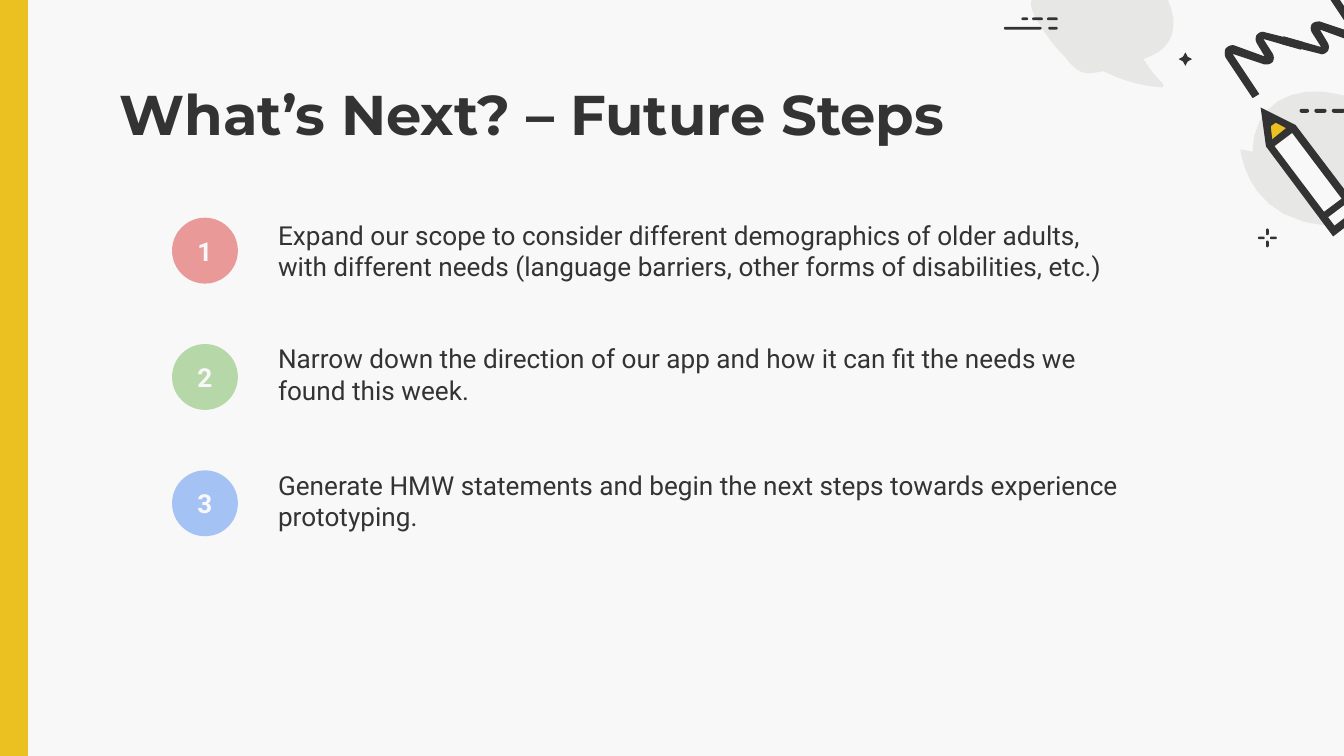
from pptx import Presentation
from pptx.dml.color import RGBColor
from pptx.enum.shapes import MSO_SHAPE
from pptx.enum.text import MSO_ANCHOR, PP_ALIGN
from pptx.util import Inches, Pt

RECTANGLE = MSO_SHAPE.RECTANGLE
ROUNDED = MSO_SHAPE.ROUNDED_RECTANGLE
STAR = MSO_SHAPE.STAR_4_POINT
OVAL = MSO_SHAPE.OVAL
TOP, MIDDLE = MSO_ANCHOR.TOP, MSO_ANCHOR.MIDDLE
LEFT, CENTER = PP_ALIGN.LEFT, PP_ALIGN.CENTER

COLORS = {
    "paper": "F8F8F8", "ink": "333333", "yellow": "EBC122", "grey": "E7E7E5",
    "red": "EA9999", "green": "B6D7A8", "blue": "A4C2F4",
}
RGB = {name: RGBColor.from_string(value) for name, value in COLORS.items()}
CURVE_STEPS = 8
SLIDE_WIDTH = 10
SLIDE_HEIGHT = SLIDE_WIDTH * 9 / 16

prs = Presentation()
prs.slide_width, prs.slide_height = Inches(SLIDE_WIDTH), Inches(SLIDE_HEIGHT)
slide = prs.slides.add_slide(prs.slide_layouts[6])
slide.background.fill.solid()
slide.background.fill.fore_color.rgb = RGB["paper"]
shapes = slide.shapes


def add_preset(kind, left, top, width, height, color):
    shape = shapes.add_shape(kind, Inches(left), Inches(top), Inches(width), Inches(height))
    shape.shadow.inherit = False
    shape.fill.solid()
    shape.fill.fore_color.rgb = RGB[color]
    shape.line.fill.background()
    return shape


def add_outline(color, *contours):
    """Fill closed contours; a pair is a line's end, six numbers a Bezier curve."""
    builder = None
    for contour in contours:
        points = [contour[0]]
        for step in contour[1:]:
            if len(step) == 2:
                points.append(step)
                continue
            controls = [points[-1], step[:2], step[2:4], step[4:]]
            for i in range(1, CURVE_STEPS + 1):
                t = i / CURVE_STEPS
                weights = ((1 - t) ** 3, 3 * t * (1 - t) ** 2, 3 * t * t * (1 - t), t ** 3)
                points.append(tuple(sum(w * c[axis] for w, c in zip(weights, controls))
                                    for axis in (0, 1)))
        emu = [(Inches(x), Inches(y)) for x, y in points]
        if builder is None:
            builder = shapes.build_freeform(*emu[0])
        else:
            builder.move_to(*emu[0])
        builder.add_line_segments(emu[1:], close=True)
    shape = builder.convert_to_shape()
    shape.shadow.inherit = False
    shape.fill.solid()
    shape.fill.fore_color.rgb = RGB[color]
    shape.line.fill.background()


# Yellow side bar
side_bar = add_preset(RECTANGLE, -0.01, 0, 0.21, SLIDE_HEIGHT, "yellow")
side_bar.line.color.rgb = RGB["yellow"]
side_bar.line.width = Pt(0.75)

# Grey speech bubbles
add_outline("grey", [
    (10, 0.71), (9.59, 0.6, 9.32, 0.8, 9.32, 1.13), (9.23, 1.11),
    (9.23, 1.11, 9.26, 1.53, 9.7, 1.65), (10.18, 1.78, 10.38, 1.49, 10.43, 1.32),
    (10.52, 0.98, 10.26, 0.78, 10, 0.71)])
add_outline("grey", [
    (8.07, -0.39), (8.15, -0.44, 8.23, -0.48, 8.32, -0.46),
    (8.39, -0.45, 8.45, -0.41, 8.49, -0.36), (8.58, -0.25, 8.66, -0.08, 8.71, 0.05),
    (8.75, 0.17, 8.74, 0.3, 8.63, 0.38), (8.59, 0.41, 8.55, 0.42, 8.51, 0.44),
    (8.55, 0.51, 8.6, 0.57, 8.65, 0.62), (8.66, 0.63, 8.66, 0.65, 8.64, 0.65),
    (8.49, 0.64, 8.35, 0.6, 8.21, 0.53), (8.16, 0.54, 8.11, 0.55, 8.06, 0.54),
    (8, 0.52, 7.96, 0.47, 7.92, 0.42), (7.83, 0.33, 7.75, 0.22, 7.69, 0.1),
    (7.64, 0, 7.7, -0.07, 7.77, -0.14), (7.86, -0.23, 7.96, -0.31, 8.07, -0.39)])

# Dashes and sparkle: left, top, width, height
dashes = [
    (9.42, 1.79, 0.02, 0.05), (9.36, 1.76, 0.05, 0.02),
    (9.42, 1.7, 0.02, 0.05), (9.45, 1.76, 0.05, 0.02),
    (7.47, 0.2, 0.28, 0.02), (7.8, 0.2, 0.07, 0.02),
    (7.6, 0.13, 0.05, 0.02), (7.68, 0.13, 0.08, 0.02), (7.79, 0.13, 0.08, 0.02),
    (9.67, 0.81, 0.07, 0.03), (9.78, 0.81, 0.09, 0.03), (9.91, 0.81, 0.1, 0.03),
]
for dash in dashes:
    add_preset(ROUNDED, *dash, "ink").adjustments[0] = 0.5
add_preset(STAR, 8.77, 0.39, 0.1, 0.1, "ink").adjustments[0] = 0.25

# Pencil
add_outline("yellow", [(9.45, 1.08), (9.63, 0.96), (9.5, 0.87), (9.43, 0.92)])
add_outline("paper", [(9.93, 1.71), (10.1, 1.59), (9.63, 0.96), (9.45, 1.08)])
add_outline("ink", [(9.51, 0.9), (9.48, 0.86), (9.41, 0.9), (9.44, 0.95)])
add_outline("ink", [(9.48, 1.09), (9.64, 0.97), (9.61, 0.92), (9.45, 1.05)])
add_outline(
    "ink",
    [(9.93, 1.68), (9.47, 1.07), (9.45, 0.89), (9.6, 0.97), (10.06, 1.58)],
    [(9.92, 1.76), (10.14, 1.59), (9.64, 0.93), (9.38, 0.8), (9.42, 1.09)])
add_outline("ink", [(9.85, 1.64), (10.05, 1.49), (10.02, 1.45), (9.82, 1.6)])

# Scribble: the second half is the first turned by 180 degrees
scribble = [
    (9.91, -0.09), (9.86, -0.06), (10.06, 0.24), (9.82, 0.16),
    (9.8, 0.16, 9.78, 0.16, 9.76, 0.18), (9.75, 0.2, 9.75, 0.22, 9.76, 0.24),
    (9.83, 0.35), (9.55, 0.27), (9.54, 0.33), (9.82, 0.4),
    (9.84, 0.41, 9.86, 0.4, 9.88, 0.38), (9.89, 0.36, 9.89, 0.34, 9.88, 0.32),
    (9.82, 0.22), (10.04, 0.3),
    (10.06, 0.31, 10.09, 0.3, 10.11, 0.28), (10.12, 0.26, 10.12, 0.23, 10.11, 0.21),
]
turned = [tuple((19.23, 0.64)[i % 2] - value for i, value in enumerate(step))
          for step in scribble]
add_outline("ink", scribble)
add_outline("ink", turned)

# Title
title = shapes.add_textbox(Inches(0.79), Inches(0.49), Inches(8.43), Inches(0.63))
texts = [(title, "What’s Next? – Future Steps", "Montserrat", 30, True, "ink", TOP, LEFT)]

# Numbered steps
steps = [
    ("red", 1.53, "Expand our scope to consider different demographics of older adults, "
     "with different needs (language barriers, other forms of disabilities, etc.)"),
    ("green", 2.45, "Narrow down the direction of our app and how it can fit the needs "
     "we found this week."),
    ("blue", 3.39, "Generate HMW statements and begin the next steps towards experience "
     "prototyping."),
]
for index, (color, top, wording) in enumerate(steps):
    badge = add_preset(OVAL, 1.28, 1.62 + 0.94 * index, 0.49, 0.49, color)
    description = shapes.add_textbox(Inches(1.97), Inches(top), Inches(6.58), Inches(0.71))
    texts.append((badge, str(index + 1), "Roboto", 14, True, "paper", MIDDLE, CENTER))
    texts.append((description, wording, "Roboto", 14, False, "ink", TOP, LEFT))

for holder, wording, font_name, size, bold, color, anchor, alignment in texts:
    frame = holder.text_frame
    frame.word_wrap = True
    frame.margin_left = frame.margin_right = Inches(0.1)
    frame.margin_top = frame.margin_bottom = Inches(0.1)
    frame.vertical_anchor = anchor
    paragraph = frame.paragraphs[0]
    paragraph.text = wording
    paragraph.alignment = alignment
    paragraph.font.name = font_name
    paragraph.font.size = Pt(size)
    paragraph.font.bold = bold
    paragraph.font.color.rgb = RGB[color]

prs.save("out.pptx")
